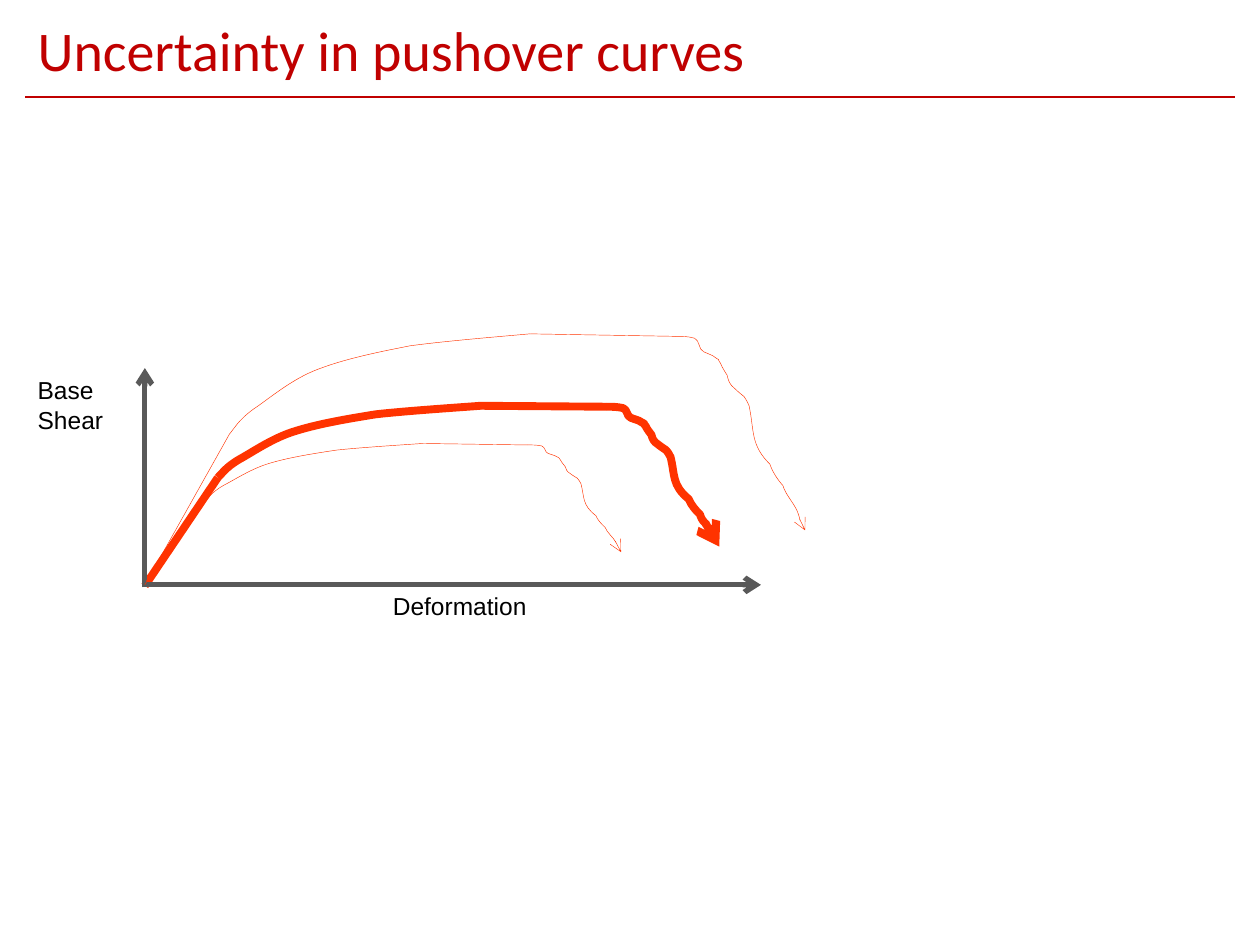
from lxml.etree import SubElement
from pptx import Presentation
from pptx.dml.color import RGBColor
from pptx.enum.shapes import MSO_CONNECTOR
from pptx.enum.text import MSO_ANCHOR
from pptx.oxml.ns import qn
from pptx.util import Cm, Pt

TITLE_RED = "C00000"
CURVE_RED = "FF3300"
AXIS_GREY = "595959"

# Bezier points as percentages of the box between a section's two ends
RISE = [
    (2, 7), (3, 14), (8, 25), (13, 35), (20, 53), (28, 63),
    (37, 74), (48, 81), (60, 88), (72, 93), (93, 98), (100, 100),
]
FALL = [
    (5, 0), (10, 0), (15, 1), (19, 2), (18, 7), (22, 8),
    (22, 8), (29, 10), (29, 10), (37, 14), (31, 10), (35, 14),
    (36, 16), (40, 20), (40, 20), (41, 23), (42, 25), (46, 27),
    (49, 29), (53, 31), (53, 31), (54, 32), (56, 34), (57, 36),
    (61, 49), (58, 56), (73, 66), (75, 70), (79, 74), (83, 77),
    (85, 82), (93, 87), (95, 92), (96, 94), (96, 96), (98, 97),
    (99, 99), (100, 100), (100, 100),
]

# Origin, yield, peak, end of plateau and failure of each curve, in cm
MEDIAN = [(2.92, 11.81), (4.39, 9.63), (9.7, 8.18), (12.22, 8.2), (14.5, 11.02)]
UPPER = [(2.92, 11.79), (4.62, 8.76), (10.69, 6.73), (13.61, 6.78), (16.23, 10.69)]
LOWER = [(2.95, 11.71), (4.17, 10.06), (8.53, 8.94), (10.64, 8.97), (12.52, 11.13)]


def color(hex_string):
    return RGBColor.from_string(hex_string)


def style_line(shape, hex_string, width, arrow=False):
    shape.line.color.rgb = color(hex_string)
    shape.line.width = Pt(width)
    if arrow:
        outline = shape.line._get_or_add_ln()
        SubElement(outline, qn("a:tailEnd"), type="arrow")


def add_line(shapes, start, end, hex_string, width, arrow=False):
    ends = [Cm(value) for value in (*start, *end)]
    line = shapes.add_connector(MSO_CONNECTOR.STRAIGHT, *ends)
    style_line(line, hex_string, width, arrow)
    SubElement(line._element.spPr, qn("a:effectLst"))


def add_bezier(shapes, start, end, percentages, width, arrow=False):
    (left, top), (right, bottom) = start, end
    points = [
        (Cm(left + (right - left) * x / 100), Cm(top + (bottom - top) * y / 100))
        for x, y in percentages
    ]
    builder = shapes.build_freeform(Cm(left), Cm(top))
    builder.add_line_segments(points, close=False)
    shape = builder.convert_to_shape()
    shape.shadow.inherit = False
    shape.fill.background()
    style_line(shape, CURVE_RED, width, arrow)

    # Turn every three straight segments into one cubic segment
    path = shape._element.find(".//" + qn("a:path"))
    segments = path.findall(qn("a:lnTo"))
    for first in range(0, len(segments), 3):
        cubic = SubElement(path, qn("a:cubicBezTo"))
        for segment in segments[first:first + 3]:
            cubic.append(segment[0])
            path.remove(segment)


def add_pushover_curve(slide, corners, width):
    origin, yielding, peak, plateau_end, failure = corners
    shapes = slide.shapes.add_group_shape().shapes
    add_line(shapes, origin, yielding, CURVE_RED, width)
    add_bezier(shapes, yielding, peak, RISE, width)
    add_line(shapes, peak, plateau_end, CURVE_RED, width)
    add_bezier(shapes, plateau_end, failure, FALL, width, arrow=True)


def add_text(slide, text, box, font_name, size, hex_string):
    shape = slide.shapes.add_textbox(*[Cm(value) for value in box])
    frame = shape.text_frame
    frame.word_wrap = True
    frame.text = text
    font = frame.paragraphs[0].runs[0].font
    font.name = font_name
    font.size = Pt(size)
    font.color.rgb = color(hex_string)
    return frame


def main():
    presentation = Presentation()
    presentation.slide_width, presentation.slide_height = Cm(25.4), Cm(19.05)
    slide = presentation.slides.add_slide(presentation.slide_layouts[6])

    # Title and rule
    add_line(slide.shapes, (0.51, 1.96), (24.89, 1.96), TITLE_RED, 1)
    title = add_text(slide, "Uncertainty in pushover curves",
                     (0.51, 0.18, 24.38, 1.78), "Calibri", 32, TITLE_RED)
    title.vertical_anchor = MSO_ANCHOR.MIDDLE
    title.paragraphs[0].line_spacing = 0.9

    # Axis labels
    add_text(slide, "Base Shear", (0.51, 7.44, 1.91, 1.45), "Arial", 14, "000000")
    add_text(slide, "Deformation", (7.67, 11.79, 3.61, 0.86), "Arial", 14, "000000")

    # Median curve, axes and the two bounds
    add_pushover_curve(slide, MEDIAN, 4.5)
    add_line(slide.shapes, (2.92, 11.84), (2.92, 7.42), AXIS_GREY, 3, arrow=True)
    add_line(slide.shapes, (2.92, 11.79), (15.34, 11.79), AXIS_GREY, 3, arrow=True)
    for bound in (UPPER, LOWER):
        add_pushover_curve(slide, bound, 0.25)

    presentation.save("out.pptx")


if __name__ == "__main__":
    main()
